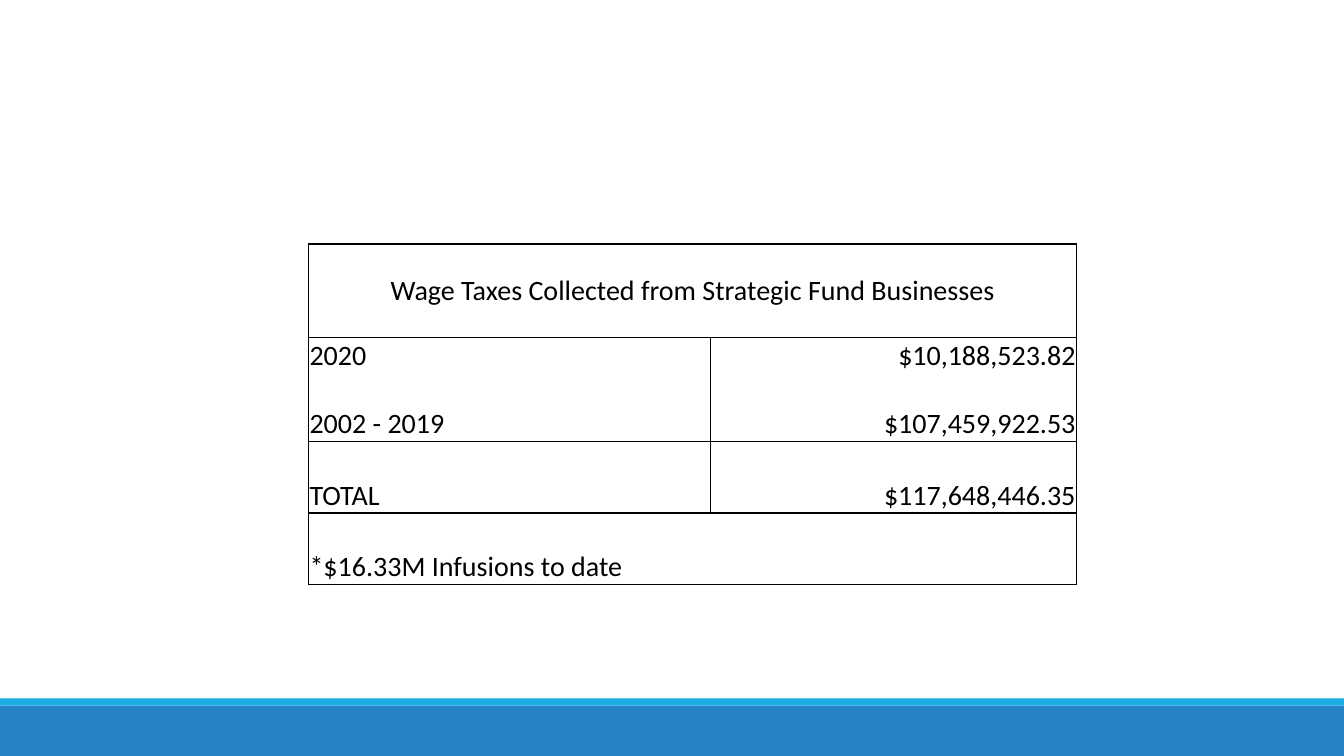
from lxml.etree import SubElement
from pptx import Presentation
from pptx.dml.color import RGBColor as Color
from pptx.enum.shapes import MSO_SHAPE as Preset
from pptx.enum.text import MSO_ANCHOR as Anchor, PP_ALIGN as Align
from pptx.oxml.ns import qn
from pptx.util import Inches, Pt

THEME = {
    "font": "Calibri",
    "size": Pt(20),
    "line_gap": Pt(24.4),
    "border": Pt(1),
    "text": Color.from_string("000000"),
    "paper": Color.from_string("FFFFFF"),
    "band": Color.from_string("2683C6"),
    "stripe": Color.from_string("1CADE4"),
}


def add_borders(cell):
    """Draw a thin line on all four sides of a table cell."""
    properties = cell._tc.get_or_add_tcPr()
    for position, side in enumerate(("lnL", "lnR", "lnT", "lnB")):
        line = SubElement(properties, qn(f"a:{side}"), w=str(THEME["border"]))
        fill = SubElement(line, qn("a:solidFill"))
        SubElement(fill, qn("a:srgbClr"), val=str(THEME["text"]))
        properties.insert(position, line)


presentation = Presentation()
presentation.slide_width = Inches(13.33)
presentation.slide_height = Inches(7.5)
width, height = presentation.slide_width, presentation.slide_height
slide = presentation.slides.add_slide(presentation.slide_layouts[6])

# Footer: a thin stripe resting on a band along the bottom edge
band_height, stripe_height = height // 15, Inches(0.07)
band_top = height - band_height
for color, top, bar_height in (
    ("band", band_top, band_height),
    ("stripe", band_top - stripe_height, stripe_height),
):
    bar = slide.shapes.add_shape(Preset.RECTANGLE, 0, top, width, bar_height)
    bar.shadow.inherit = False
    bar.fill.solid()
    bar.fill.fore_color.rgb = THEME[color]
    bar.line.fill.background()

# Wage tax table: one entry per row, each cell a list of its lines
column_widths = [Inches(3.99), Inches(3.63)]
row_heights = [Inches(0.93), Inches(1.01), Inches(0.71), Inches(0.71)]
wage_taxes = [
    [["Wage Taxes Collected from Strategic Fund Businesses"]],
    [["2020", "2002 - 2019"], ["$10,188,523.82", "$107,459,922.53"]],
    [["TOTAL"], ["$117,648,446.35"]],
    [["*$16.33M Infusions to date"]],
]
frame = slide.shapes.add_table(
    len(row_heights), len(column_widths), Inches(3.06), Inches(2.42),
    sum(column_widths), sum(row_heights),
)
table = frame.table
table.first_row = table.horz_banding = False
for column, column_width in zip(table.columns, column_widths):
    column.width = column_width
for row, row_height in zip(table.rows, row_heights):
    row.height = row_height

cell_format = {
    "margin_left": Inches(0.01),
    "margin_right": Inches(0.01),
    "margin_top": Inches(0.01),
    "margin_bottom": 0,
}
for row_index, entries in enumerate(wage_taxes):
    is_heading = row_index == 0
    if len(entries) == 1:
        table.cell(row_index, 0).merge(table.cell(row_index, 1))
    for cell in table.rows[row_index].cells:
        for name, value in cell_format.items():
            setattr(cell, name, value)
        cell.vertical_anchor = Anchor.MIDDLE if is_heading else Anchor.BOTTOM
        cell.fill.solid()
        cell.fill.fore_color.rgb = THEME["paper"]
        add_borders(cell)
    for column_index, lines in enumerate(entries):
        text_frame = table.cell(row_index, column_index).text_frame
        text_frame.text = "\n".join(lines)
        for line_index, paragraph in enumerate(text_frame.paragraphs):
            if is_heading:
                paragraph.alignment = Align.CENTER
            else:
                paragraph.alignment = (Align.LEFT, Align.RIGHT)[column_index]
            if line_index:
                paragraph.space_before = THEME["line_gap"]
            font = paragraph.runs[0].font
            font.name, font.size = THEME["font"], THEME["size"]
            font.color.rgb = THEME["text"]

presentation.save("out.pptx")
